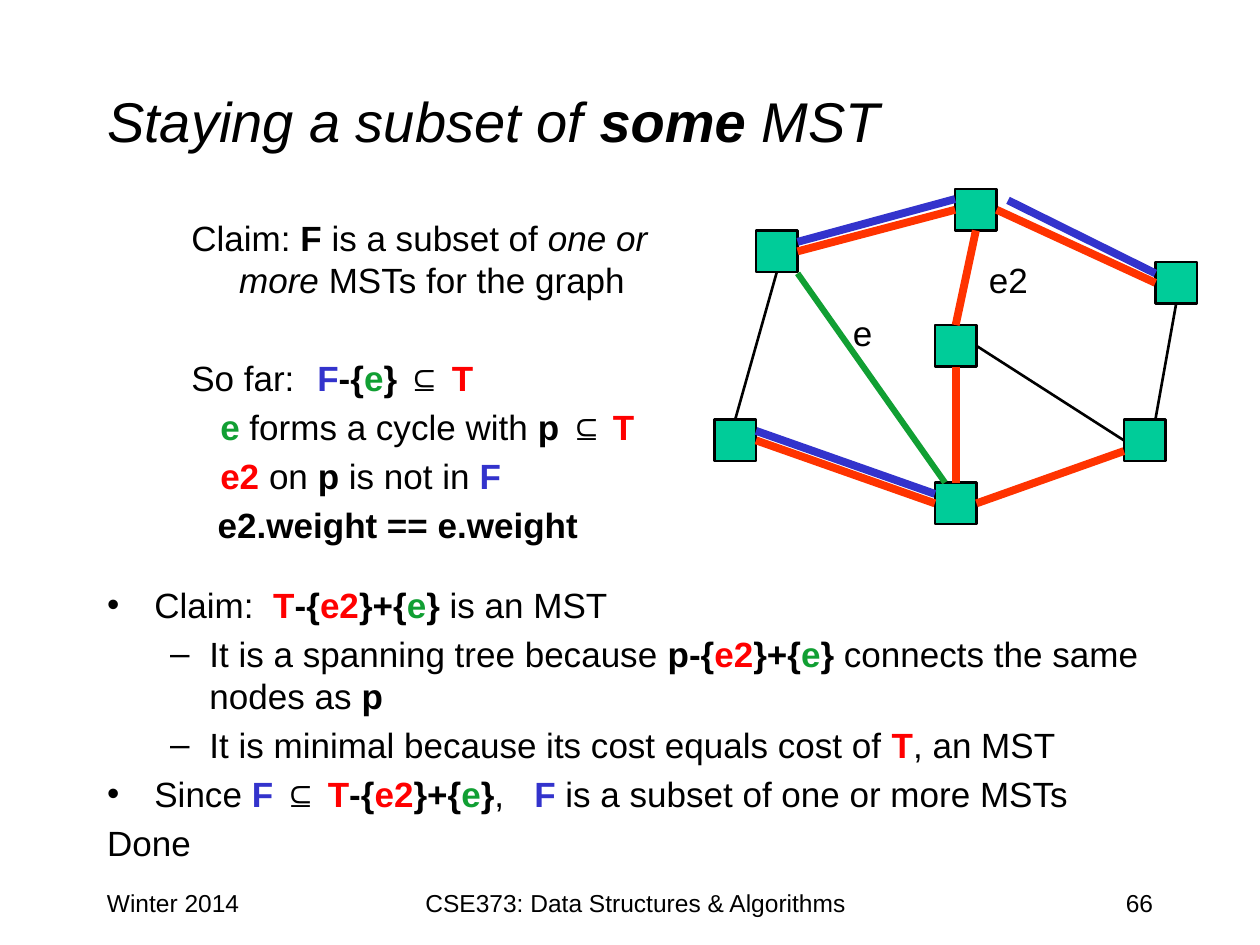
from dataclasses import dataclass
from functools import partial

from lxml import etree
from pptx import Presentation
from pptx.dml.color import RGBColor
from pptx.enum.shapes import MSO_CONNECTOR, MSO_SHAPE
from pptx.enum.text import MSO_ANCHOR, PP_ALIGN
from pptx.oxml.ns import qn
from pptx.util import Inches, Pt

LEFT, CENTER, RIGHT = PP_ALIGN.LEFT, PP_ALIGN.CENTER, PP_ALIGN.RIGHT
MIDDLE = MSO_ANCHOR.MIDDLE
STRAIGHT = MSO_CONNECTOR.STRAIGHT
RECT = MSO_SHAPE.RECTANGLE
TOP_SIDE, LEFT_SIDE, BOTTOM_SIDE, RIGHT_SIDE = range(4)

BLACK, RED, GREEN, BLUE = "000000", "FF0000", "119F33", "3333CC"
NODE_FILL, TREE_EDGE = "00CC99", "FF3300"
NODE_SIZE = 0.33


@dataclass(frozen=True)
class Run:
    text: str
    color: str = BLACK
    bold: bool = False
    italic: bool = False
    font: str = "Arial"


@dataclass(frozen=True)
class Para:
    runs: list
    level: int = 0
    margin: float | None = None
    indent: float = 0
    before: float | None = None
    tab: float | None = None


@dataclass(frozen=True)
class Edge:
    start: tuple
    end: tuple
    color: str = BLACK
    width: float = 1.5


bold = partial(Run, bold=True)
red = partial(bold, color=RED)
green = partial(bold, color=GREEN)
blue = partial(bold, color=BLUE)
SWAP = [bold("-{"), red("e2"), bold("}+{"), green("e"), bold("}")]

PROOF = [
    Para([Run("Claim:  "), red("T"), *SWAP, Run(" is an MST")]),
    Para([Run("It is a spanning tree because "), bold("p"), *SWAP,
          Run(" connects the same nodes as "), bold("p")], level=1),
    Para([Run("It is minimal because its cost equals cost of "), red("T"),
          Run(", an MST")], level=1),
    Para([Run("Since "), blue("F"), bold(" ⊆"), red(" T"), *SWAP,
          Run(",\t"), blue("F "), Run("is a subset of one or more MSTs")], tab=3.39),
    Para([Run("Done")], margin=0),
]

CLAIM = [
    Para([Run("Claim: "), bold("F"), Run(" is a subset of "),
          Run("one or more", italic=True), Run(" MSTs for the graph")],
         margin=0.38, indent=-0.38, before=4),
    Para([Run("So far:\t"), blue("F"), bold("-{"), green("e"), bold("} ⊆ "), red("T")],
         margin=0, before=32, tab=1.13),
    Para([green("e"), Run(" forms a cycle with "), bold("p "),
          bold("⊆ ", font="Times New Roman"), red("T")], margin=0.23, before=4),
    Para([red("e2 "), Run("on "), bold("p"), Run(" is not in "), blue("F")],
         margin=0.23, before=4),
    Para([bold("e2.weight == e.weight")], margin=0.21, before=4),
]

NODES = {
    "upper left": (6, 1.83),
    "lower left": (5.67, 3.33),
    "bottom": (7.42, 3.83),
    "lower right": (8.92, 3.33),
    "center": (7.42, 2.58),
    "top": (7.58, 1.5),
    "upper right": (9.17, 2.08),
}

tree_edge = partial(Edge, color=TREE_EDGE, width=4.5)
forest_edge = partial(Edge, color=BLUE, width=4.5)
EDGES = [
    tree_edge(("upper left", RIGHT_SIDE), ("top", LEFT_SIDE)),
    tree_edge(("top", BOTTOM_SIDE), ("center", TOP_SIDE)),
    tree_edge(("top", RIGHT_SIDE), ("upper right", LEFT_SIDE)),
    Edge(("center", RIGHT_SIDE), ("lower right", LEFT_SIDE)),
    Edge(("upper right", BOTTOM_SIDE), (9.17, 3.33)),
    tree_edge(("center", BOTTOM_SIDE), ("bottom", TOP_SIDE)),
    tree_edge(("bottom", RIGHT_SIDE), (8.92, 3.58)),
    tree_edge(("lower left", RIGHT_SIDE), ("bottom", LEFT_SIDE)),
    Edge(("upper left", BOTTOM_SIDE), ("lower left", TOP_SIDE)),
    Edge((6.33, 2.17), (7.5, 3.83), GREEN, 3.5),
    forest_edge((6.33, 1.92), (7.58, 1.58)),
    forest_edge((6, 3.42), (7.42, 3.92)),
    forest_edge((8, 1.59), (9.17, 2.17)),
]


def rgb(value: str) -> RGBColor:
    return RGBColor.from_string(value)


def add_run(p, text: str, size: float = 20, color: str = BLACK, bold: bool = False,
            italic: bool = False, font: str = "Arial") -> None:
    r = p.add_run()
    r.text = text
    r.font.name, r.font.size = font, Pt(size)
    r.font.bold, r.font.italic = bold, italic
    r.font.color.rgb = rgb(color)


def fill_paragraphs(tf, paras: list[Para]) -> None:
    for i, para in enumerate(paras):
        p = tf.add_paragraph() if i else tf.paragraphs[0]
        p.level = para.level
        if para.before is not None:
            p.space_before = Pt(para.before)
        pPr = p._p.get_or_add_pPr()
        if para.margin is not None:
            pPr.set("marL", str(Inches(para.margin)))
            pPr.set("indent", str(Inches(para.indent)))
            etree.SubElement(pPr, qn("a:buNone"))
        if para.tab is not None:
            tabs = etree.SubElement(pPr, qn("a:tabLst"))
            etree.SubElement(tabs, qn("a:tab"), pos=str(Inches(para.tab)), algn="l")
        for run in para.runs:
            add_run(p, run.text, color=run.color, bold=run.bold,
                    italic=run.italic, font=run.font)


def place(sp, x: float, y: float, w: float, h: float) -> None:
    sp.left, sp.top, sp.width, sp.height = map(Inches, (x, y, w, h))


def add_box(s, x: float, y: float, w: float, h: float, wrap: bool = True):
    tf = s.shapes.add_textbox(*map(Inches, (x, y, w, h))).text_frame
    tf.word_wrap = wrap
    return tf


def add_label(s, text: str, x: float, y: float, w: float, h: float,
              size: float = 20, align=LEFT, wrap: bool = True) -> None:
    p = add_box(s, x, y, w, h, wrap).paragraphs[0]
    p.alignment = align
    add_run(p, text, size=size)


def add_node(s, x: float, y: float):
    sp = s.shapes.add_shape(RECT, *map(Inches, (x, y, NODE_SIZE, NODE_SIZE)))
    sp.shadow.inherit = False
    sp.fill.solid()
    sp.fill.fore_color.rgb = rgb(NODE_FILL)
    sp.line.color.rgb = rgb(BLACK)
    sp.line.width = Pt(1.5)
    return sp


def add_edge(s, edge: Edge, nodes: dict) -> None:
    ends = [(0, 0) if end[0] in nodes else end for end in (edge.start, edge.end)]
    line = s.shapes.add_connector(STRAIGHT, *map(Inches, ends[0] + ends[1]))
    for end, connect in ((edge.start, line.begin_connect), (edge.end, line.end_connect)):
        if end[0] in nodes:
            connect(nodes[end[0]], end[1])
    line.line.color.rgb = rgb(edge.color)
    line.line.width = Pt(edge.width)
    etree.SubElement(line._element.spPr, qn("a:effectLst"))


def main() -> None:
    prs = Presentation()
    prs.slide_width, prs.slide_height = Inches(10), Inches(7.5)
    s = prs.slides.add_slide(prs.slide_layouts[1])

    title, body = s.placeholders
    place(title, 0.75, 0.33, 8.5, 1.25)
    title.text_frame.vertical_anchor = MIDDLE
    p = title.text_frame.paragraphs[0]
    p.alignment = LEFT
    for text, strong in (("Staying a subset of ", False), ("some", True), (" MST", False)):
        add_run(p, text, size=32, bold=strong, italic=True)
    place(body, 0.75, 4.58, 8.5, 2.25)
    fill_paragraphs(body.text_frame, PROOF)

    add_label(s, "Winter 2014", 0.75, 7, 2.08, 0.5, size=14)
    add_label(s, "66", 7.17, 7, 2.08, 0.5, size=14, align=RIGHT)
    add_label(s, "CSE373: Data Structures & Algorithms", 3.17, 7, 3.75, 0.5,
              size=14, align=CENTER)

    nodes = {name: add_node(s, *at) for name, at in NODES.items()}
    for edge in EDGES:
        add_edge(s, edge, nodes)
    fill_paragraphs(add_box(s, 1.42, 1.67, 4, 2.67), CLAIM)
    add_label(s, "e", 6.67, 2.42, 0.36, 0.44, wrap=False)
    add_label(s, "e2", 7.75, 2, 0.51, 0.44, wrap=False)
    prs.save("out.pptx")


if __name__ == "__main__":
    main()
